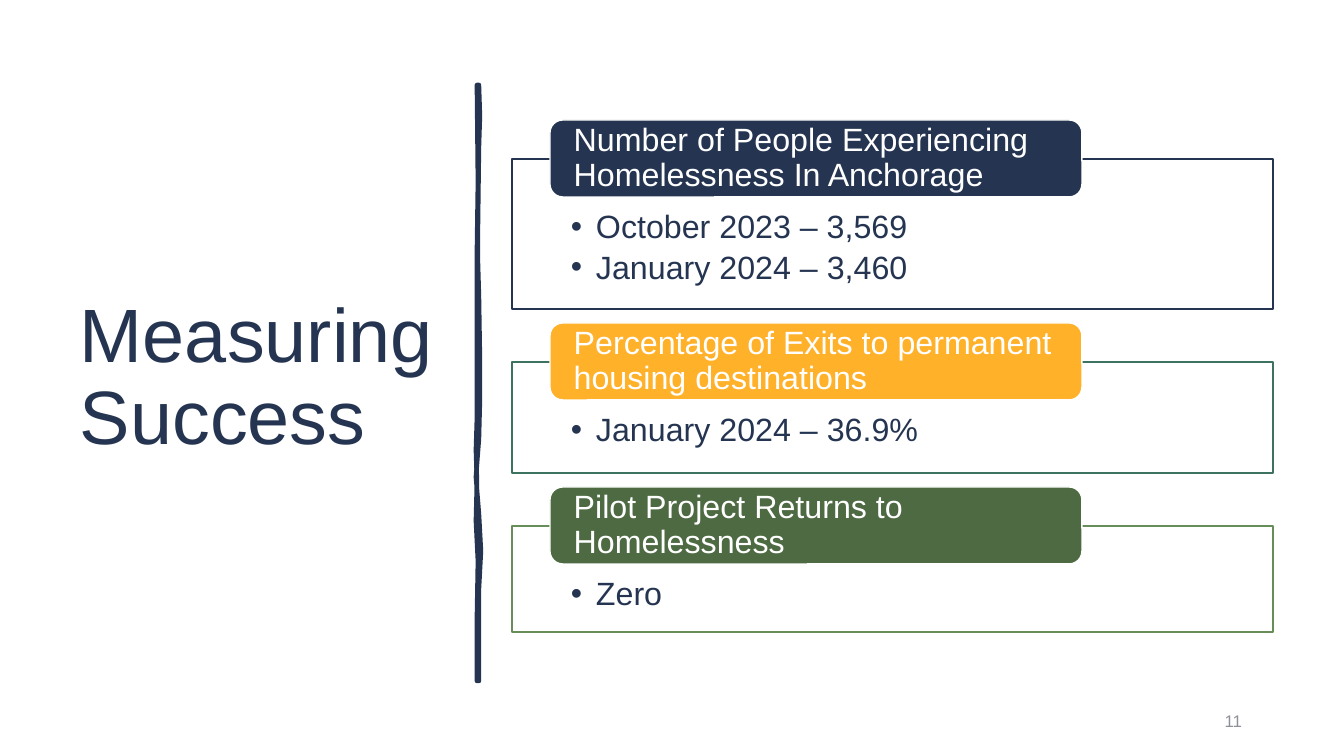
from lxml.etree import SubElement
from pptx import Presentation
from pptx.dml.color import RGBColor
from pptx.enum.shapes import MSO_SHAPE
from pptx.enum.text import MSO_ANCHOR, PP_ALIGN
from pptx.oxml.ns import qn
from pptx.util import Pt

COLORS = {
    "navy": "253551", "amber": "FFB12A", "green": "4D6A42",
    "teal": "3D7160", "leaf": "678D58", "white": "FFFFFF", "gray": "8E9098",
}
TITLE = "Measuring Success"
PAGE_NUMBER = "11"
MEASURES = [
    ("Number of People Experiencing Homelessness In Anchorage",
     ["October 2023 – 3,569", "January 2024 – 3,460"], "navy", "navy", 150),
    ("Percentage of Exits to permanent housing destinations",
     ["January 2024 – 36.9%"], "amber", "teal", 111),
    ("Pilot Project Returns to Homelessness", ["Zero"], "green", "leaf", 106),
]
RIGHT_EDGE = [(479, 85), (480, 116), (479, 147), (478, 228), (478, 262), (479, 296),
              (480, 359), (480, 400), (479, 439), (476, 477), (479, 514), (481, 551),
              (479, 589), (479, 681)]
LEFT_EDGE = [(477, 681), (477, 618), (478, 561), (476, 521), (477, 481), (476, 450),
             (477, 418), (477, 338), (477, 252), (478, 182), (477, 85)]

SCALE = 914400 / 100.8
PANEL_LEFT, PANEL_WIDTH, PANEL_DROP = 512, 761, 39
HEADING_LEFT, HEADING_WIDTH, HEADING_HEIGHT = 550, 532, 77
FIRST_TOP, GAP = 120, 14


def px(value):
    return round(value * SCALE)


def color(name):
    return RGBColor.from_string(COLORS[name])


def write(shape, lines, size, fill, anchor=MSO_ANCHOR.MIDDLE, align=PP_ALIGN.LEFT,
          insets=(10, 5, 10, 5), spacing=None, after=0, bullet_indent=0):
    frame = shape.text_frame
    frame.word_wrap = True
    frame.vertical_anchor = anchor
    frame.margin_left, frame.margin_top, frame.margin_right, frame.margin_bottom = map(px, insets)
    for index, line in enumerate(lines):
        paragraph = frame.add_paragraph() if index else frame.paragraphs[0]
        paragraph.alignment = align
        paragraph.line_spacing = spacing
        paragraph.space_after = Pt(after)
        if bullet_indent:
            properties = paragraph._p.get_or_add_pPr()
            properties.set("marL", str(px(bullet_indent)))
            properties.set("indent", str(-px(bullet_indent)))
            SubElement(properties, qn("a:buFont")).set("typeface", "Arial")
            SubElement(properties, qn("a:buChar")).set("char", "•")
        run = paragraph.add_run()
        run.text = line
        for font in (paragraph.font, run.font):
            font.name = "Arial"
            font.size = Pt(size)
            font.color.rgb = color(fill)


def paint(shape, fill, line, width):
    shape.shadow.inherit = False
    shape.fill.solid()
    shape.fill.fore_color.rgb = color(fill)
    shape.line.color.rgb = color(line)
    shape.line.width = Pt(width)


def add_box(slide, kind, left, top, width, height, fill, line):
    shape = slide.shapes.add_shape(kind, px(left), px(top), px(width), px(height))
    paint(shape, fill, line, 1)
    return shape


def add_text(slide, left, top, width, height, text, **style):
    box = slide.shapes.add_textbox(px(left), px(top), px(width), px(height))
    write(box, [text], **style)


def add_divider(slide):
    start, *outline = RIGHT_EDGE + LEFT_EDGE
    builder = slide.shapes.build_freeform(*start, scale=SCALE)
    builder.add_line_segments(outline, close=True)
    paint(builder.convert_to_shape(), "navy", "navy", 3.25)


def add_measures(slide):
    top = FIRST_TOP
    for heading, results, fill, outline, height in MEASURES:
        panel_top = top + PANEL_DROP
        panel = add_box(slide, MSO_SHAPE.RECTANGLE, PANEL_LEFT, panel_top,
                        PANEL_WIDTH, height, "white", outline)
        write(panel, results, 23, "navy", anchor=MSO_ANCHOR.TOP, insets=(59, 52, 59, 18),
              spacing=0.9, after=4, bullet_indent=25)
        label = add_box(slide, MSO_SHAPE.ROUNDED_RECTANGLE, HEADING_LEFT, top,
                        HEADING_WIDTH, HEADING_HEIGHT, fill, "white")
        write(label, [heading], 23, "white", insets=(20, 0, 20, 0), spacing=0.9)
        top = panel_top + height + GAP


def main():
    presentation = Presentation()
    presentation.slide_width, presentation.slide_height = px(1344), px(756)
    slide = presentation.slides.add_slide(presentation.slide_layouts[6])
    add_text(slide, 70, 71, 377, 616, TITLE, size=54, fill="navy", spacing=0.9)
    add_divider(slide)
    add_text(slide, 950, 701, 302, 40, PAGE_NUMBER, size=12, fill="gray", align=PP_ALIGN.RIGHT)
    add_measures(slide)
    presentation.save("out.pptx")


if __name__ == "__main__":
    main()
